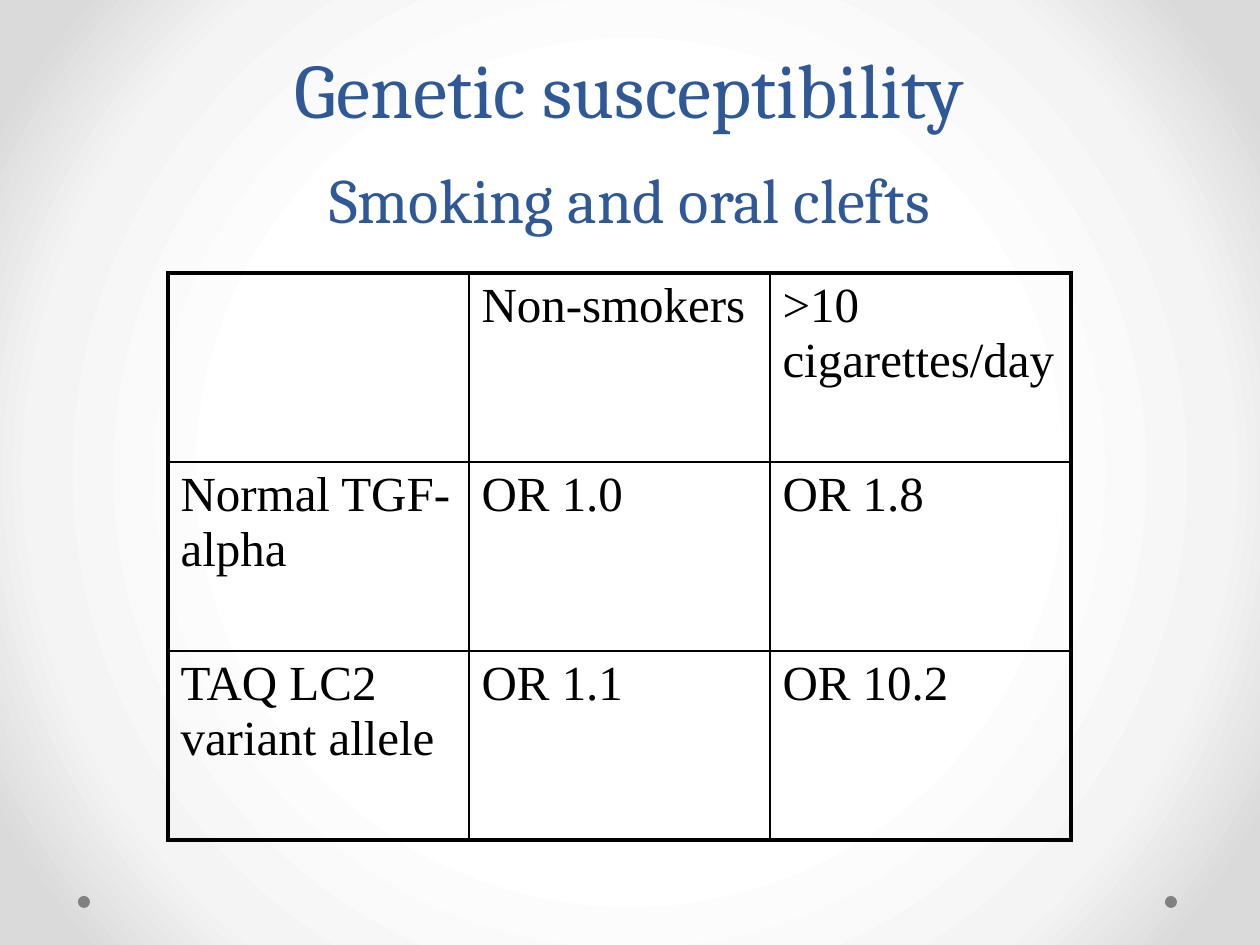
from pptx import Presentation
from pptx.dml.color import RGBColor
from pptx.enum.shapes import MSO_SHAPE as Shape
from pptx.enum.text import MSO_ANCHOR as Anchor, PP_ALIGN as Align
from pptx.oxml import parse_xml
from pptx.oxml.ns import nsdecls, qn
from pptx.util import Emu, Pt


def px(count):
    return Emu(round(count * 914400 / 126))


def color(value):
    return RGBColor.from_string(value)


deck = Presentation()
deck.slide_width, deck.slide_height = px(1260), px(945)
page = deck.slides.add_slide(deck.slide_layouts[6])

page.background.fill.solid()
background = page.element.find(".//" + qn("p:bgPr"))
stops = "".join(
    f'<a:gs pos="{percent * 1000}"><a:srgbClr val="{shade}"/></a:gs>'
    for percent, shade in [(50, "FFFFFF"), (76, "F4F4F4"), (92, "DADADA")]
)
background.replace(background[0], parse_xml(
    f'<a:gradFill {nsdecls("a")} rotWithShape="1"><a:gsLst>{stops}</a:gsLst>'
    '<a:path path="circle"><a:fillToRect l="50000" t="50000" r="50000" b="50000"/>'
    '</a:path></a:gradFill>'
))

for left in (78, 1165):
    dot = page.shapes.add_shape(Shape.OVAL, px(left), px(896), px(12), px(12))
    dot.shadow.inherit = False
    dot.fill.solid()
    dot.fill.fore_color.rgb = color("808080")
    dot.line.fill.background()

box = page.shapes.add_textbox(px(94), px(84), px(1071), px(158))
frame = box.text_frame
frame.word_wrap = True
frame.vertical_anchor = Anchor.BOTTOM
frame.text = "Genetic susceptibility\vSmoking and oral clefts"
para = frame.paragraphs[0]
para.alignment = Align.CENTER
para.line_spacing = Pt(58)
for span, size in zip(para.runs, (44, 36)):
    span.font.name = "Cambria"
    span.font.size = Pt(size)
    span.font.color.rgb = color("2F5897")

rows = [
    ["", "Non-smokers", ">10 cigarettes/day"],
    ["Normal TGF-alpha", "OR 1.0", "OR 1.8"],
    ["TAQ LC2 variant allele", "OR 1.1", "OR 10.2"],
]
last = len(rows) - 1
table = page.shapes.add_table(3, 3, px(168), px(273), px(903), px(567)).table
table.first_row = table.horz_banding = False
for row, texts in enumerate(rows):
    for column, text in enumerate(texts):
        cell = table.cell(row, column)
        cell.text = text
        for span in cell.text_frame.paragraphs[0].runs:
            span.font.name = "Times New Roman"
            span.font.size = Pt(28)
            span.font.color.rgb = color("000000")
        outer_edges = {"L": column == 0, "R": column == last, "T": row == 0, "B": row == last}
        properties = cell._tc.get_or_add_tcPr()
        for side, outer in outer_edges.items():
            properties.append(parse_xml(
                f'<a:ln{side} {nsdecls("a")} w="{Pt(2.25 if outer else 1)}"><a:solidFill>'
                f'<a:srgbClr val="000000"/></a:solidFill></a:ln{side}>'
            ))
        cell.fill.background()

deck.save("out.pptx")
